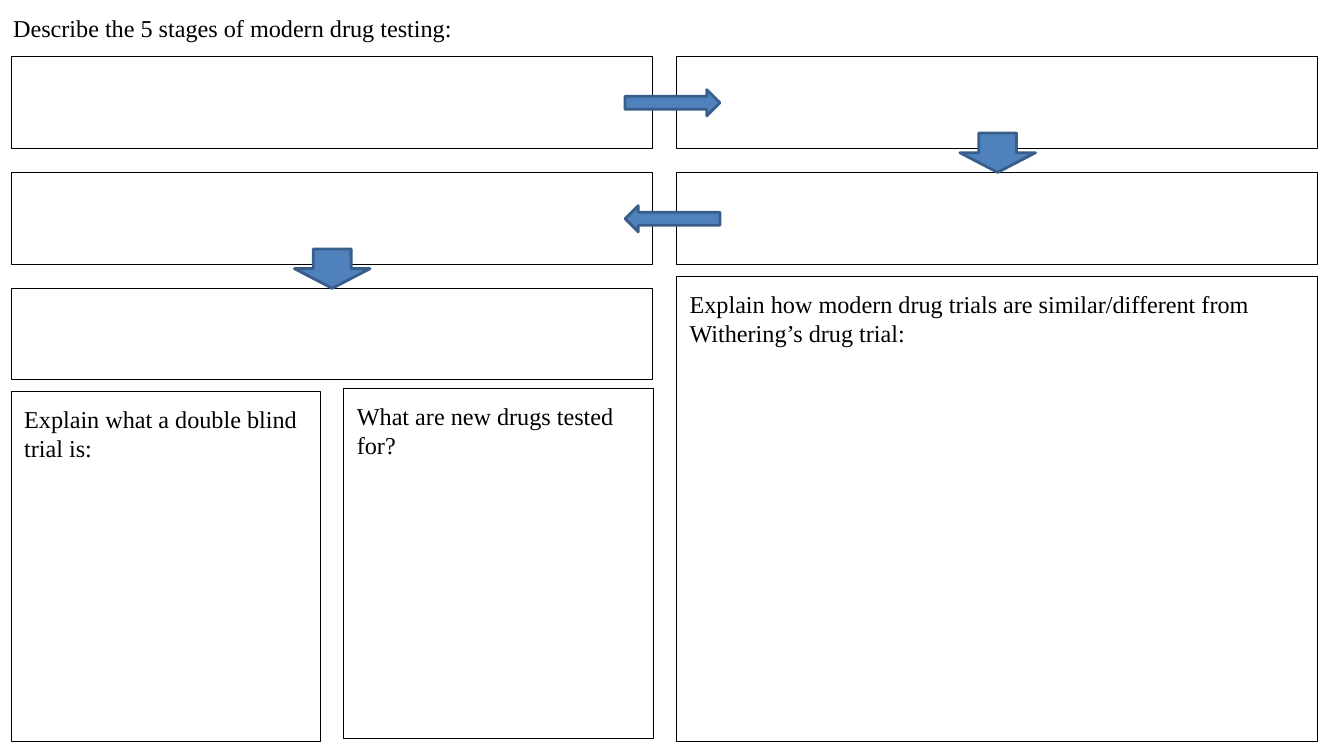
"""Build a worksheet slide about the stages of modern drug testing."""
from dataclasses import dataclass

from pptx import Presentation
from pptx.dml.color import RGBColor
from pptx.enum.shapes import MSO_SHAPE
from pptx.enum.text import MSO_ANCHOR, MSO_AUTO_SIZE, PP_ALIGN
from pptx.util import Inches, Pt


@dataclass(frozen=True)
class Theme:
    font: str = "Times New Roman"
    text_size: float = 17.3
    ink: str = "000000"
    paper: str = "FFFFFF"
    arrow_fill: str = "4F81BD"
    arrow_line: str = "395E89"
    thin: float = 0.75
    thick: float = 2
    inset: float = 0.13


def set_text(box, text, *, font, size, color, inset):
    frame = box.text_frame
    frame.word_wrap = True
    frame.auto_size = MSO_AUTO_SIZE.NONE
    frame.vertical_anchor = MSO_ANCHOR.TOP
    frame.margin_left = frame.margin_right = Inches(inset)
    frame.margin_top = frame.margin_bottom = Inches(inset)
    para = frame.paragraphs[0]
    para.alignment = PP_ALIGN.LEFT
    span = para.add_run()
    span.text = text
    span.font.name = font
    span.font.size = Pt(size)
    span.font.color.rgb = RGBColor.from_string(color)


class Worksheet:
    def __init__(self, page, theme):
        self.page = page
        self.theme = theme

    def paint(self, shape, fill, line, width):
        if fill:
            shape.fill.solid()
            shape.fill.fore_color.rgb = RGBColor.from_string(fill)
        else:
            shape.fill.background()
        shape.line.color.rgb = RGBColor.from_string(line)
        shape.line.width = Pt(width)

    def label(self, box, text):
        theme = self.theme
        set_text(box, text, font=theme.font, size=theme.text_size,
                 color=theme.ink, inset=theme.inset)

    def shape(self, kind, place, fill, line, width):
        shape = self.page.shapes.add_shape(kind, *map(Inches, place))
        shape.shadow.inherit = False
        self.paint(shape, fill, line, width)
        return shape

    def heading(self, text, place):
        title = self.page.shapes.title
        title.left, title.top, title.width, title.height = map(Inches, place)
        self.paint(title, self.theme.paper, self.theme.paper, self.theme.thin)
        self.label(title, text)

    def stage(self, place):
        self.shape(MSO_SHAPE.RECTANGLE, place, self.theme.paper,
                   self.theme.ink, self.theme.thin)

    def question(self, text, place):
        box = self.shape(MSO_SHAPE.RECTANGLE, place, None,
                         self.theme.ink, self.theme.thin)
        self.label(box, text)

    def arrow(self, kind, place, rotation=0):
        arrow = self.shape(kind, place, self.theme.arrow_fill,
                           self.theme.arrow_line, self.theme.thick)
        arrow.rotation = rotation


def main():
    deck = Presentation()
    deck.slide_width, deck.slide_height = Inches(13.33), Inches(7.5)
    page = deck.slides.add_slide(deck.slide_layouts[5])
    sheet = Worksheet(page, Theme())

    left, right = 0.11, 6.71
    first_row, row_step = 0.56, 1.15
    stage_width, stage_height = 6.36, 0.91
    sheet.heading("Describe the 5 stages of modern drug testing:", (0, 0, 5.09, 0.56))
    for column, row in ((left, 0), (right, 0), (right, 1), (left, 1), (left, 2)):
        sheet.stage((column, first_row + row * row_step, stage_width, stage_height))

    for row, rotation in enumerate((0, 180)):
        sheet.arrow(MSO_SHAPE.RIGHT_ARROW,
                    (6.2, 0.89 + row * row_step, 0.94, 0.26), rotation)
    for row, column in enumerate((right, left)):
        sheet.arrow(MSO_SHAPE.DOWN_ARROW,
                    (column + 2.81, 1.32 + row * row_step, 0.75, 0.39))

    questions = (
        ("Explain how modern drug trials are similar/different from "
         "Withering’s drug trial:", (right, 2.74, stage_width, 4.62)),
        ("Explain what a double blind trial is:", (left, 3.88, 3.07, 3.48)),
        ("What are new drugs tested for?", (3.41, 3.85, 3.07, 3.48)),
    )
    for text, place in questions:
        sheet.question(text, place)
    deck.save("out.pptx")


if __name__ == "__main__":
    main()
